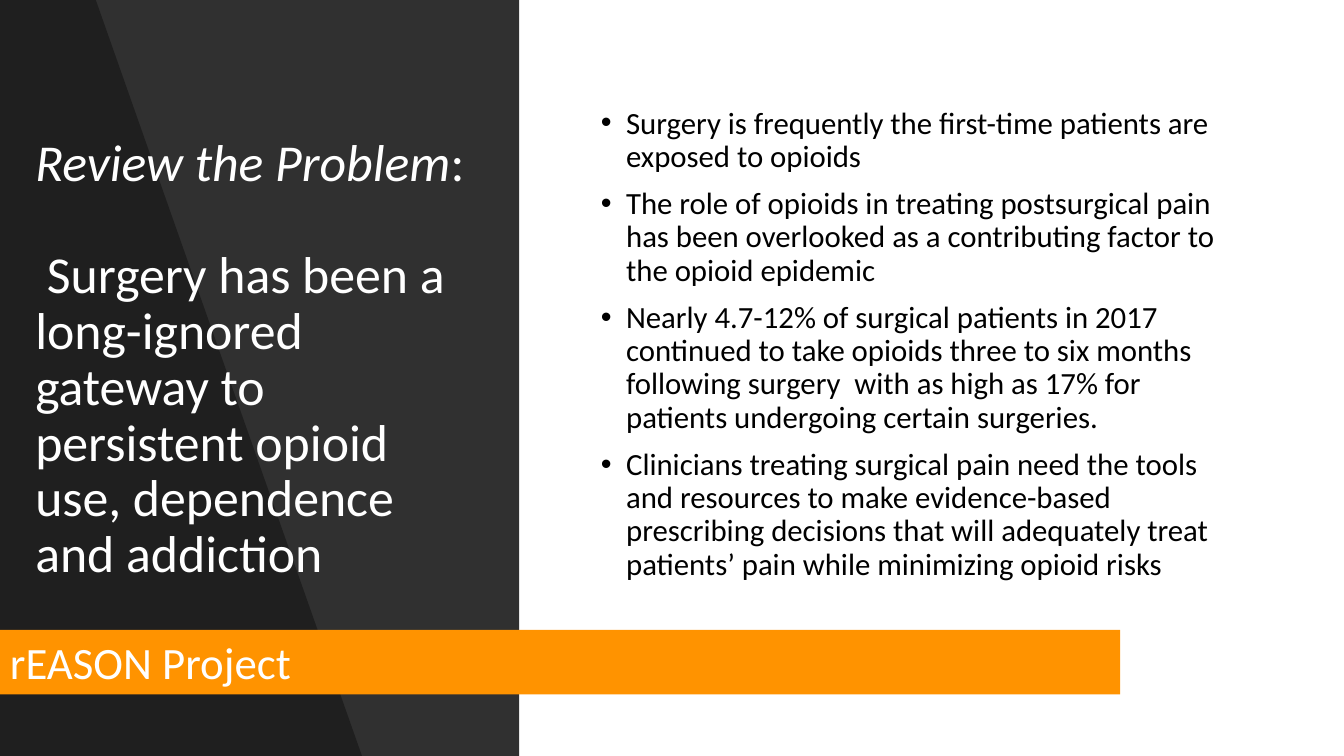
from dataclasses import dataclass

from lxml import etree
from pptx import Presentation
from pptx.dml import color
from pptx.enum import shapes, text
from pptx.oxml import ns
from pptx.util import Inches, Pt

WHITE = color.RGBColor(0xFF, 0xFF, 0xFF)
BLACK = color.RGBColor(0x00, 0x00, 0x00)
ORANGE = color.RGBColor(0xFF, 0x93, 0x00)
FONT = "Calibri"
WIDTH, HEIGHT = 13.33, 7.5

BULLETS = [
    "Surgery is frequently the first-time patients are exposed to opioids",
    "The role of opioids in treating postsurgical pain has been overlooked as a "
    "contributing factor to the opioid epidemic",
    "Nearly 4.7-12% of surgical patients in 2017 continued to take opioids three to six "
    "months following surgery  with as high as 17% for patients undergoing certain surgeries.",
    "Clinicians treating surgical pain need the tools and resources to make evidence-based "
    "prescribing decisions that will adequately treat patients’ pain while minimizing "
    "opioid risks",
]


@dataclass
class Panel:
    corners: list[tuple[float, float]]
    fill: color.RGBColor
    opacity: int = 100


PANELS = [
    Panel([(0, 0), (WIDTH, 0), (WIDTH, HEIGHT), (0, HEIGHT)], WHITE),
    Panel([(0, 0), (5.15, 0), (5.15, HEIGHT), (0, HEIGHT)], BLACK, 81),
    Panel([(0, 0), (0.95, 0), (3.59, HEIGHT), (0, HEIGHT)], BLACK, 35),
]


def paint(shape, fill: color.RGBColor, opacity: int = 100) -> None:
    shape.shadow.inherit = False
    shape.line.fill.background()
    shape.fill.solid()
    shape.fill.fore_color.rgb = fill
    if opacity < 100:
        tint = shape.element.spPr.find(".//" + ns.qn("a:srgbClr"))
        etree.SubElement(tint, ns.qn("a:alpha"), val=str(opacity * 1000))


def add_panel(slide, panel: Panel) -> None:
    left, top = panel.corners[0]
    right, bottom = panel.corners[2]
    if panel.corners[1][0] == right:
        shape = slide.shapes.add_shape(
            shapes.MSO_SHAPE.RECTANGLE,
            Inches(left), Inches(top), Inches(right - left), Inches(bottom - top),
        )
    else:
        points = [(Inches(x), Inches(y)) for x, y in panel.corners]
        builder = slide.shapes.build_freeform(*points[0])
        builder.add_line_segments(points[1:], close=True)
        shape = builder.convert_to_shape()
    paint(shape, panel.fill, panel.opacity)


def place(slide, placeholder, left: float, width: float):
    slide.shapes.element.append(placeholder.element)
    placeholder.left, placeholder.top = Inches(left), Inches(0.7)
    placeholder.width, placeholder.height = Inches(width), Inches(5.75)
    frame = placeholder.text_frame
    frame.word_wrap = True
    frame.auto_size = text.MSO_AUTO_SIZE.NONE
    frame.vertical_anchor = text.MSO_ANCHOR.MIDDLE
    return frame


def style(paragraph, size: float, ink: color.RGBColor, before: float = 0,
          spacing: float = 0.9) -> None:
    paragraph.alignment = text.PP_ALIGN.LEFT
    paragraph.line_spacing = spacing
    paragraph.space_before = Pt(before)
    paragraph.font.name = FONT
    paragraph.font.size = Pt(size)
    paragraph.font.color.rgb = ink


def add_title(slide) -> None:
    frame = place(slide, slide.shapes.title, 0.25, 4.5)
    heading = frame.paragraphs[0]
    topic = heading.add_run()
    topic.text = "Review the Problem"
    topic.font.italic = True
    heading.add_run().text = ":"
    style(heading, 37, WHITE)
    statement = frame.add_paragraph()
    statement.text = (" Surgery has been a long-ignored gateway to persistent opioid use, "
                      "dependence and addiction")
    style(statement, 37, WHITE, before=40)


def add_bullets(slide) -> None:
    frame = place(slide, slide.placeholders[1], 5.86, 6.59)
    frame.margin_bottom = Inches(0.36)
    for index, sentence in enumerate(BULLETS):
        paragraph = frame.add_paragraph() if index else frame.paragraphs[0]
        paragraph.text = sentence
        properties = paragraph._p.get_or_add_pPr()
        properties.set("marL", str(Inches(0.25)))
        properties.set("indent", str(Inches(-0.25)))
        etree.SubElement(properties, ns.qn("a:buFont"), typeface="Arial")
        etree.SubElement(properties, ns.qn("a:buChar"), char="•")
        style(paragraph, 22, BLACK, before=10 if index else 0)


def add_project_bar(slide) -> None:
    bar = slide.shapes.add_shape(
        shapes.MSO_SHAPE.RECTANGLE, 0, Inches(6.25), Inches(11.11), Inches(0.64))
    paint(bar, ORANGE)
    frame = bar.text_frame
    frame.word_wrap = True
    frame.auto_size = text.MSO_AUTO_SIZE.SHAPE_TO_FIT_TEXT
    frame.vertical_anchor = text.MSO_ANCHOR.TOP
    frame.text = "rEASON Project"
    style(frame.paragraphs[0], 32, WHITE, spacing=1.0)


def main() -> None:
    presentation = Presentation()
    presentation.slide_width = Inches(WIDTH)
    presentation.slide_height = Inches(HEIGHT)
    slide = presentation.slides.add_slide(presentation.slide_layouts[1])
    slide.background.fill.solid()
    slide.background.fill.fore_color.rgb = BLACK
    for panel in PANELS:
        add_panel(slide, panel)
    add_title(slide)
    add_bullets(slide)
    add_project_bar(slide)
    presentation.save("out.pptx")


if __name__ == "__main__":
    main()
